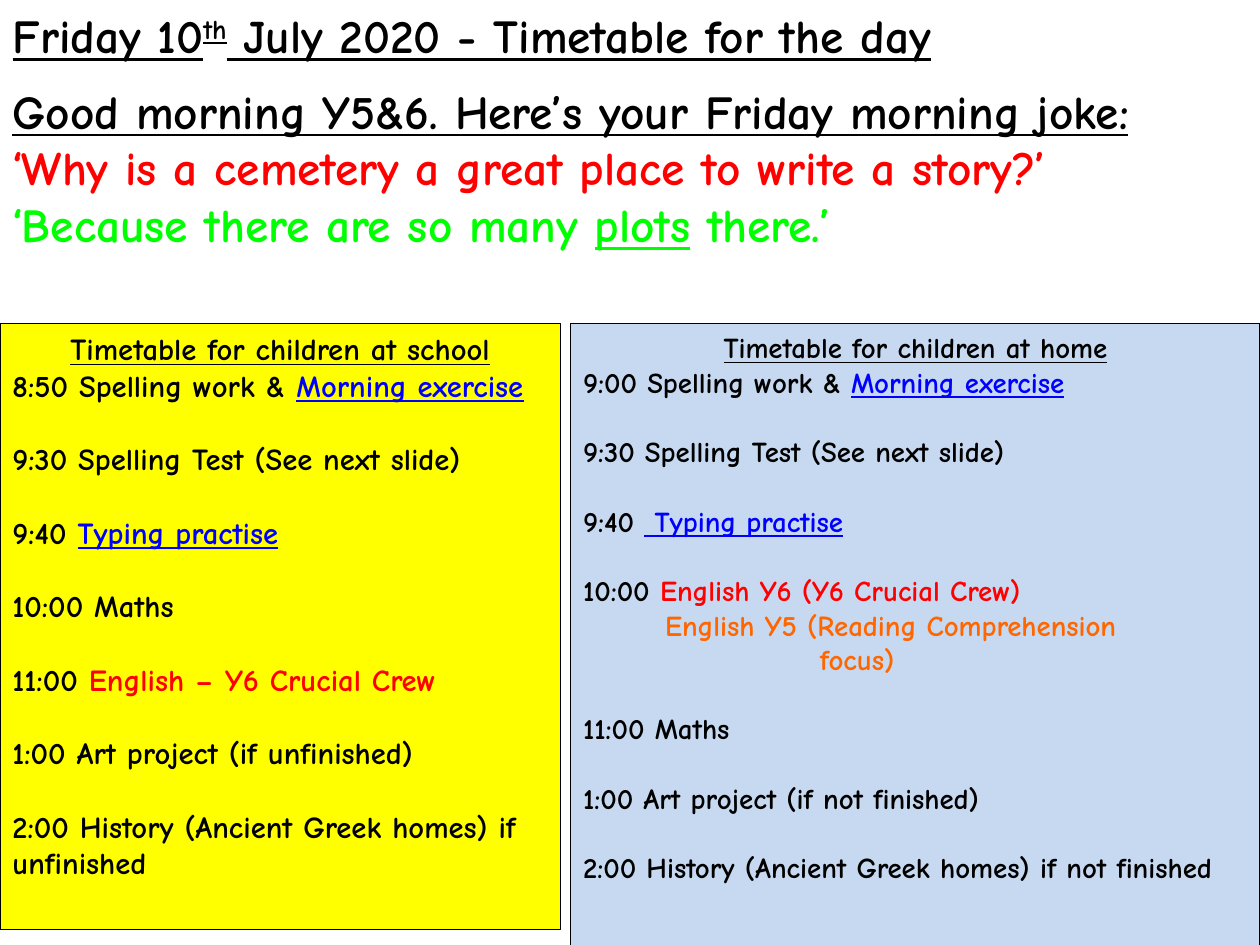
from dataclasses import dataclass

import pptx
import pptx.dml.color
import pptx.enum.shapes
import pptx.enum.text
import pptx.util
from pptx.util import Inches

FONT = "Comic Neue"
LINE_HEIGHT = 1.2
COLOURS = {
    "black": "000000",
    "red": "FF0000",
    "green": "00FF00",
    "blue": "0000FF",
    "orange": "FF6600",
    "yellow": "FFFF00",
    "pale blue": "C6D9F1",
}


@dataclass(frozen=True)
class Run:
    text: str
    colour: str = "black"
    underline: bool = False
    superscript: bool = False


@dataclass(frozen=True)
class Line:
    runs: tuple[Run, ...]
    gap: bool = False
    centred: bool = False
    indent: float = 0


@dataclass(frozen=True)
class Timetable:
    left: float
    width: float
    height: float
    fill: str
    size: float
    lines: tuple[Line, ...]


def colour(name: str) -> pptx.dml.color.RGBColor:
    return pptx.dml.color.RGBColor.from_string(COLOURS[name])


def heading(text: str) -> Line:
    return Line((Run(text, underline=True),), centred=True)


def entry(*runs: Run) -> Line:
    """A timetable line set one blank line below the one before."""
    return Line(runs, gap=True)


def link(text: str) -> Run:
    return Run(text, "blue", underline=True)


def write_lines(shape, lines: tuple[Line, ...], size: float) -> None:
    frame = shape.text_frame
    frame.word_wrap = True
    frame.auto_size = pptx.enum.text.MSO_AUTO_SIZE.NONE
    frame.vertical_anchor = pptx.enum.text.MSO_ANCHOR.TOP
    alignments = pptx.enum.text.PP_ALIGN
    for index, line in enumerate(lines):
        paragraph = frame.paragraphs[0] if index == 0 else frame.add_paragraph()
        paragraph.alignment = alignments.CENTER if line.centred else alignments.LEFT
        paragraph.space_before = pptx.util.Pt(size * LINE_HEIGHT if line.gap else 0)
        if line.indent:
            properties = paragraph._p.get_or_add_pPr()
            properties.set("marL", str(Inches(line.indent)))
            properties.set("indent", "0")
        for part in line.runs:
            run = paragraph.add_run()
            run.text = part.text
            run.font.name = FONT
            run.font.size = pptx.util.Pt(size)
            run.font.bold = True
            run.font.underline = part.underline
            run.font.color.rgb = colour(part.colour)
            if part.superscript:
                run.font._element.set("baseline", "30000")


def draw_timetable(slide, timetable: Timetable) -> None:
    shape = slide.shapes.add_shape(
        pptx.enum.shapes.MSO_SHAPE.RECTANGLE,
        Inches(timetable.left), Inches(2.57),
        Inches(timetable.width), Inches(timetable.height),
    )
    shape.shadow.inherit = False
    shape.fill.solid()
    shape.fill.fore_color.rgb = colour(timetable.fill)
    shape.line.color.rgb = colour("black")
    shape.line.width = pptx.util.Pt(0.75)
    write_lines(shape, timetable.lines, timetable.size)


TITLE = (
    Line((
        Run("Friday 10", underline=True),
        Run("th", underline=True, superscript=True),
        Run(" July 2020 - Timetable for the day", underline=True),
    )),
)
JOKE = (
    Line((Run("Good morning Y5&6. Here’s your Friday morning joke:", underline=True),)),
    Line((Run("‘Why is a cemetery a great place to write a story?’", "red"),)),
    Line((
        Run("‘Because there are so many ", "green"),
        Run("plots", "green", underline=True),
        Run(" there.’", "green"),
    )),
)
SPELLING_TEST = entry(Run("9:30 Spelling Test (See next slide)"))
TIMETABLES = (
    Timetable(0, 4.45, 4.81, "yellow", 17.5, (
        heading("Timetable for children at school"),
        Line((Run("8:50 Spelling work & "), link("Morning exercise"))),
        SPELLING_TEST,
        entry(Run("9:40 "), link("Typing practise")),
        entry(Run("10:00 Maths")),
        entry(Run("11:00 "), Run("English – Y6 Crucial Crew", "red")),
        entry(Run("1:00 Art project (if unfinished)")),
        entry(Run("2:00 History (Ancient Greek homes) if unfinished")),
    )),
    Timetable(4.53, 5.47, 4.96, "pale blue", 16.5, (
        heading("Timetable for children at home"),
        Line((Run("9:00 Spelling work & "), link("Morning exercise"))),
        SPELLING_TEST,
        entry(Run("9:40 "), link(" Typing practise")),
        entry(Run("10:00 "), Run("English Y6 (Y6 Crucial Crew)", "red")),
        Line((Run("English Y5 (Reading Comprehension", "orange"),), indent=0.65),
        Line((Run("focus)", "orange"),), indent=1.88),
        entry(Run("11:00 Maths")),
        entry(Run("1:00 Art project (if not finished)")),
        entry(Run("2:00 History (Ancient Greek homes) if not finished")),
    )),
)


def main() -> None:
    presentation = pptx.Presentation()
    presentation.slide_width = Inches(10)
    presentation.slide_height = Inches(7.5)
    slide = presentation.slides.add_slide(presentation.slide_layouts.get_by_name("Title Only"))

    title = slide.shapes.title
    title.left, title.top = Inches(0), Inches(0)
    title.width, title.height = Inches(10), Inches(0.56)
    write_lines(title, TITLE, 27)

    joke = slide.shapes.add_textbox(Inches(0), Inches(0.6), Inches(10), Inches(1.92))
    write_lines(joke, JOKE, 27)

    for timetable in TIMETABLES:
        draw_timetable(slide, timetable)
    presentation.save("out.pptx")


if __name__ == "__main__":
    main()
